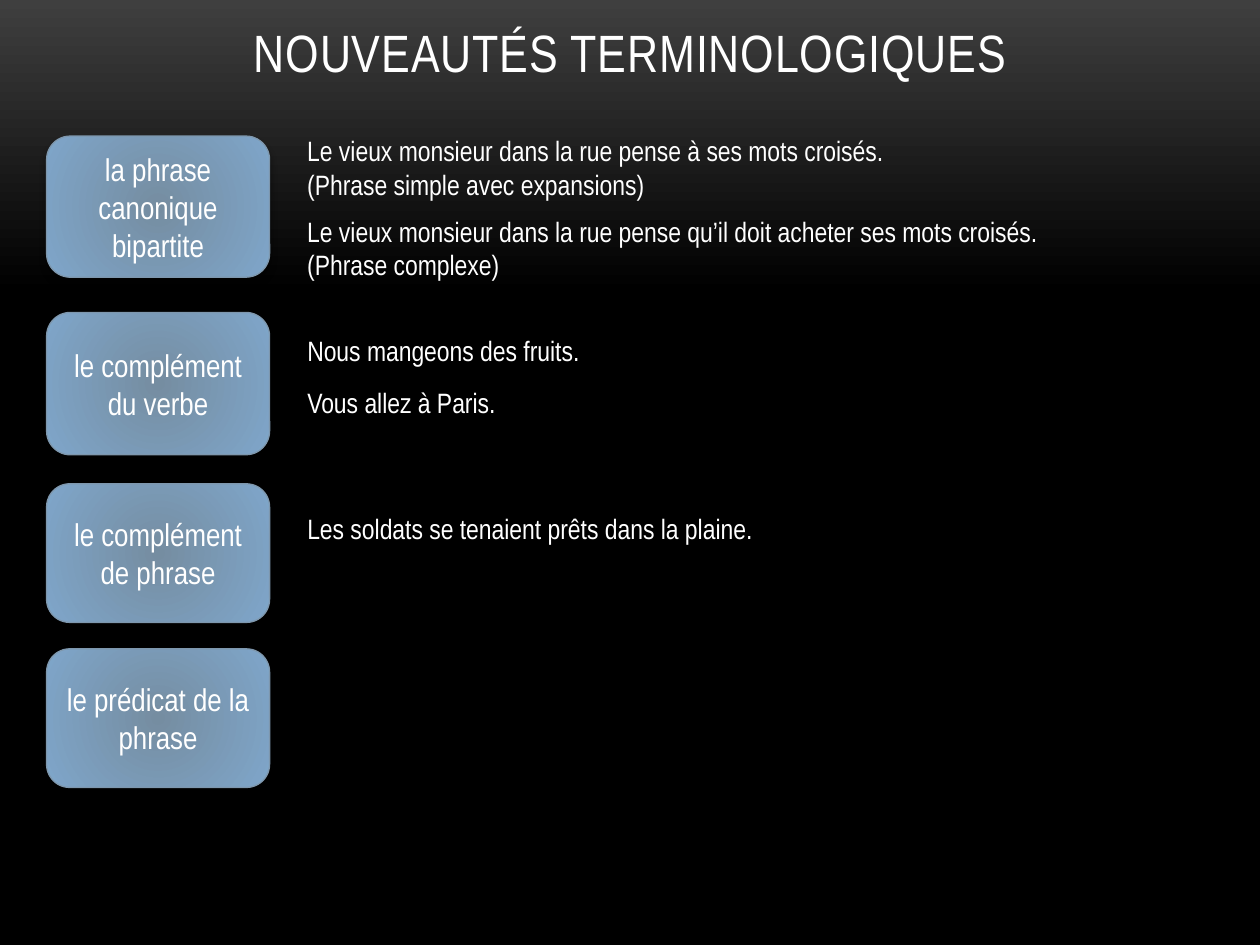
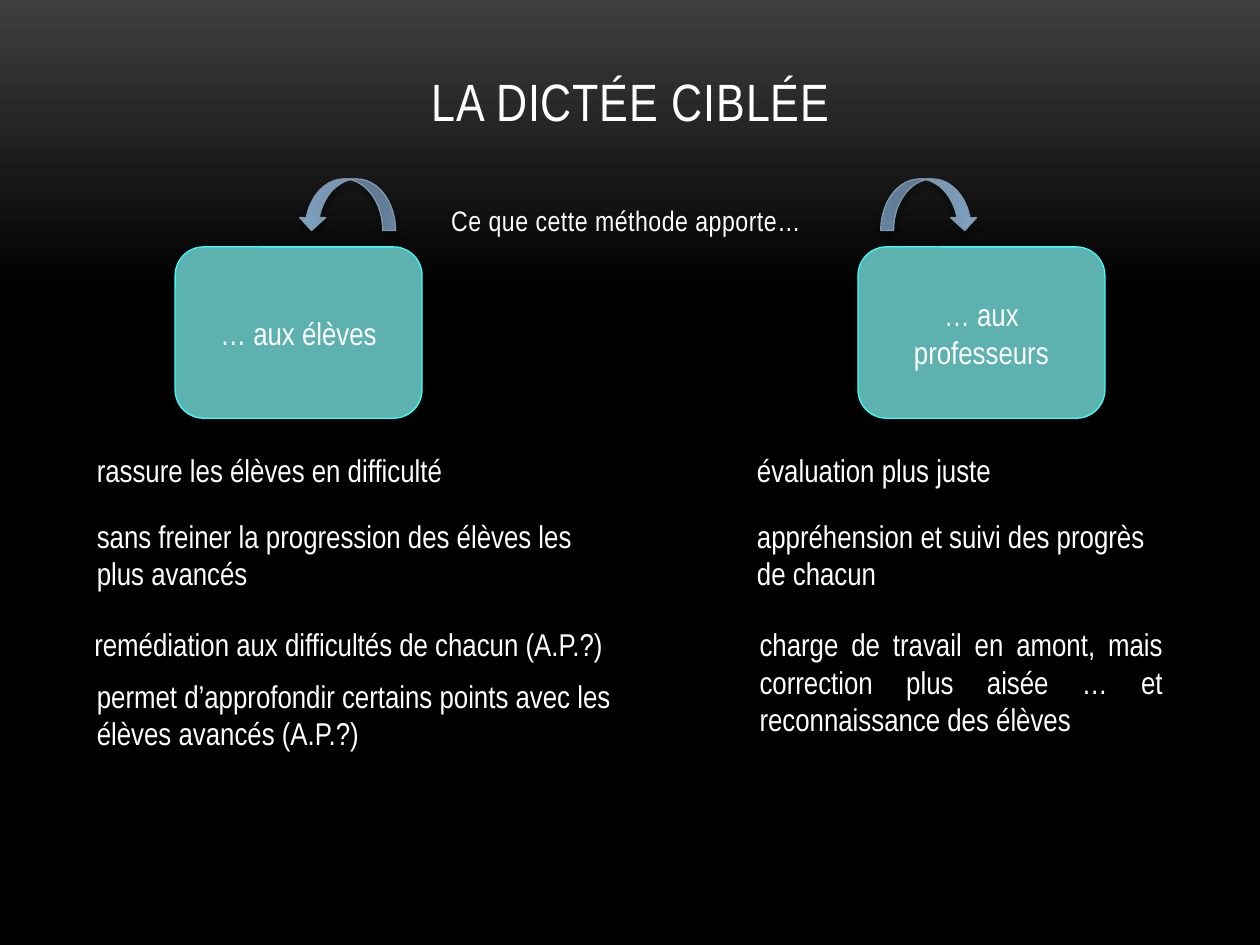
from dataclasses import dataclass
from typing import Optional

from lxml.etree import SubElement
from pptx import Presentation
from pptx.dml.color import RGBColor
from pptx.dml.fill import FillFormat
from pptx.enum.shapes import MSO_SHAPE
from pptx.enum.text import MSO_ANCHOR, MSO_AUTO_SIZE, PP_ALIGN
from pptx.oxml.ns import qn
from pptx.shapes.autoshape import Shape
from pptx.slide import Slide
from pptx.text.text import TextFrame
from pptx.util import Emu, Inches, Pt

WIDTH, HEIGHT = Inches(10), Inches(7.5)
COL, ROW = WIDTH // 100, HEIGHT // 150
FONT = "Arial Narrow"
COLORS = {
    "text": "FFFFFF",
    "bg_top": "3F3F3F",
    "bg_bottom": "000000",
    "steel_core": "758DA1",
    "steel_rim": "7FA6CA",
    "steel_line": "7E97AD",
    "teal": "5DB2B0",
    "teal_line": "39FFFC",
    "shadow": "000000",
}


@dataclass(frozen=True)
class Area:
    """A place on the slide, in grid columns and rows."""
    col: float
    row: float
    cols: float
    rows: float

    def emu(self) -> tuple[Emu, ...]:
        return (Emu(round(self.col * COL)), Emu(round(self.row * ROW)),
                Emu(round(self.cols * COL)), Emu(round(self.rows * ROW)))


@dataclass(frozen=True)
class Block:
    """Plain text at a grid place; its height follows from its line count."""
    col: float
    row: float
    cols: float
    text: str
    lines: int = 1
    wrap: bool = True
    align: Optional[PP_ALIGN] = None

    def area(self, size: float) -> Area:
        inches = 0.1 + self.lines * size * 1.22 / 72
        return Area(self.col, self.row, self.cols, Inches(inches) / ROW)


@dataclass(frozen=True)
class Button:
    area: Area
    text: str


TERMS = [
    Button(Area(3.7, 21.6, 17.7, 22.4), "la phrase canonique bipartite"),
    Button(Area(3.7, 49.6, 17.7, 22.6), "le complément du verbe"),
    Button(Area(3.7, 76.8, 17.7, 22), "le complément de phrase"),
    Button(Area(3.7, 103, 17.7, 22), "le prédicat de la phrase"),
]
EXAMPLES = [
    Block(23.4, 20.2, 70, "Le vieux monsieur dans la rue pense à ses mots croisés.\n"
          "(Phrase simple avec expansions)", 2),
    Block(23.4, 33, 60.7, "Le vieux monsieur dans la rue pense qu’il doit acheter "
          "ses mots croisés.\n(Phrase complexe)", 2, wrap=False),
    Block(23.4, 52, 23.9, "Nous mangeons des fruits.", wrap=False),
    Block(23.4, 60.2, 17.2, "Vous allez à Paris.", wrap=False),
    Block(23.4, 80.2, 37.8, "Les soldats se tenaient prêts dans la plaine.", wrap=False),
]
AUDIENCES = [
    Button(Area(13.9, 39.2, 19.6, 27.2), "… aux élèves"),
    Button(Area(68.1, 39.2, 19.6, 27.2), "… aux professeurs"),
]
BENEFITS = [
    Block(6.7, 70.6, 29.7, "rassure les élèves en difficulté", wrap=False),
    Block(6.7, 81, 43.3, "sans freiner la progression des élèves les plus avancés", 2),
    Block(6.5, 98.2, 42.8, "remédiation aux difficultés de chacun (A.P.?)", wrap=False),
    Block(6.7, 106.4, 42.9,
          "permet d’approfondir certains points avec les élèves avancés (A.P.?)", 2),
    Block(59.1, 70.6, 34.3, "évaluation plus juste"),
    Block(59.1, 81, 34.3, "appréhension et suivi des progrès de chacun", 2),
    Block(59.3, 98.2, 34, "charge de travail en amont, mais correction plus aisée … "
          "et reconnaissance des élèves", 3, align=PP_ALIGN.JUSTIFY),
]


def rgb(name: str) -> RGBColor:
    return RGBColor.from_string(COLORS[name])


def write(tf: TextFrame, text: str, size: float, align: Optional[PP_ALIGN] = None,
          spacing: float = 0) -> None:
    """Fill a frame with text; spacing is the tracking in points."""
    tf.text = text
    for p in tf.paragraphs:
        p.alignment = align
        for r in p.runs:
            r.font.name, r.font.size = FONT, Pt(size)
            r.font.color.rgb = rgb("text")
            if spacing:
                r.font._element.set("spc", str(round(spacing * 100)))


def add_text(s: Slide, area: Area, text: str, size: float,
             align: Optional[PP_ALIGN] = None, spacing: float = 0) -> TextFrame:
    tf = s.shapes.add_textbox(*area.emu()).text_frame
    tf.word_wrap = True
    write(tf, text, size, align, spacing)
    return tf


def add_block(s: Slide, block: Block, size: float) -> None:
    tf = add_text(s, block.area(size), block.text, size, block.align)
    tf.word_wrap = block.wrap
    tf.auto_size = MSO_AUTO_SIZE.SHAPE_TO_FIT_TEXT


def set_stops(fill: FillFormat, start: str, end: str, end_at: float = 1) -> None:
    fill.gradient()
    first, last = fill.gradient_stops
    first.color.rgb, last.color.rgb = rgb(start), rgb(end)
    first.position, last.position = 0, end_at


def fill_steel(sp: Shape) -> None:
    """Give a shape the radial steel-blue gradient."""
    set_stops(sp.fill, "steel_core", "steel_rim")
    grad = sp._element.spPr.find(qn("a:gradFill"))
    grad.remove(grad.find(qn("a:lin")))
    circle = SubElement(grad, qn("a:path"), {"path": "circle"})
    SubElement(circle, qn("a:fillToRect"), dict.fromkeys("ltrb", "100000"))


def add_shadow(sp: Shape) -> None:
    sp.shadow.inherit = False
    effects = sp._element.spPr.find(qn("a:effectLst"))
    outer = SubElement(effects, qn("a:outerShdw"), {
        "blurRad": str(Pt(4)), "dist": str(Pt(3.4)), "dir": "5400000",
        "rotWithShape": "0"})
    color = SubElement(outer, qn("a:srgbClr"), {"val": COLORS["shadow"]})
    SubElement(color, qn("a:alpha"), {"val": "40000"})


def add_figure(s: Slide, kind: MSO_SHAPE, area: Area, teal: bool = False) -> Shape:
    """Add a shadowed shape in steel blue, or in flat teal."""
    sp = s.shapes.add_shape(kind, *area.emu())
    if teal:
        sp.fill.solid()
        sp.fill.fore_color.rgb = rgb("teal")
    else:
        fill_steel(sp)
    sp.line.color.rgb = rgb("teal_line" if teal else "steel_line")
    sp.line.width = Pt(0.75)
    add_shadow(sp)
    return sp


def add_button(s: Slide, button: Button, teal: bool = False) -> None:
    tf = add_figure(s, MSO_SHAPE.ROUNDED_RECTANGLE, button.area, teal).text_frame
    tf.word_wrap = True
    tf.vertical_anchor = MSO_ANCHOR.MIDDLE
    write(tf, button.text, 18, PP_ALIGN.CENTER)


def add_slide(prs: Presentation, title: str, row: float, rows: float) -> Slide:
    s = prs.slides.add_slide(prs.slide_layouts[6])
    fill = s.background.fill
    set_stops(fill, "bg_top", "bg_bottom", 0.31)
    fill.gradient_angle = 270
    tf = add_text(s, Area(6.7, row, 86.7, rows), title, 30, PP_ALIGN.CENTER, 0.5)
    tf.vertical_anchor = MSO_ANCHOR.BOTTOM
    return s


def build_terms(prs: Presentation) -> None:
    s = add_slide(prs, "NOUVEAUTÉS TERMINOLOGIQUES", 1, 13.2)
    for term in TERMS:
        add_button(s, term)
    for example in EXAMPLES:
        add_block(s, example, 16)


def build_dictation(prs: Presentation) -> None:
    s = add_slide(prs, "LA DICTÉE CIBLÉE", 6, 16)
    tf = add_text(s, Area(31.3, 32.4, 36.8, 8.2), "Ce que cette méthode apporte…",
                  16.1, PP_ALIGN.CENTER, 0.3)
    p = tf.paragraphs[0]
    p.line_spacing, p.space_after = 0.8, Pt(6)
    for audience in AUDIENCES:
        add_button(s, audience, teal=True)
    for col, flipped in ((69.9, False), (23.7, True)):
        arrow = add_figure(s, MSO_SHAPE.CURVED_DOWN_ARROW, Area(col, 28.4, 7.7, 8.2))
        if flipped:
            arrow._element.spPr.xfrm.set("flipH", "1")
    for benefit in BENEFITS:
        add_block(s, benefit, 18)


def main() -> None:
    prs = Presentation()
    prs.slide_width, prs.slide_height = WIDTH, HEIGHT
    build_terms(prs)
    build_dictation(prs)
    prs.save("out.pptx")


if __name__ == "__main__":
    main()
